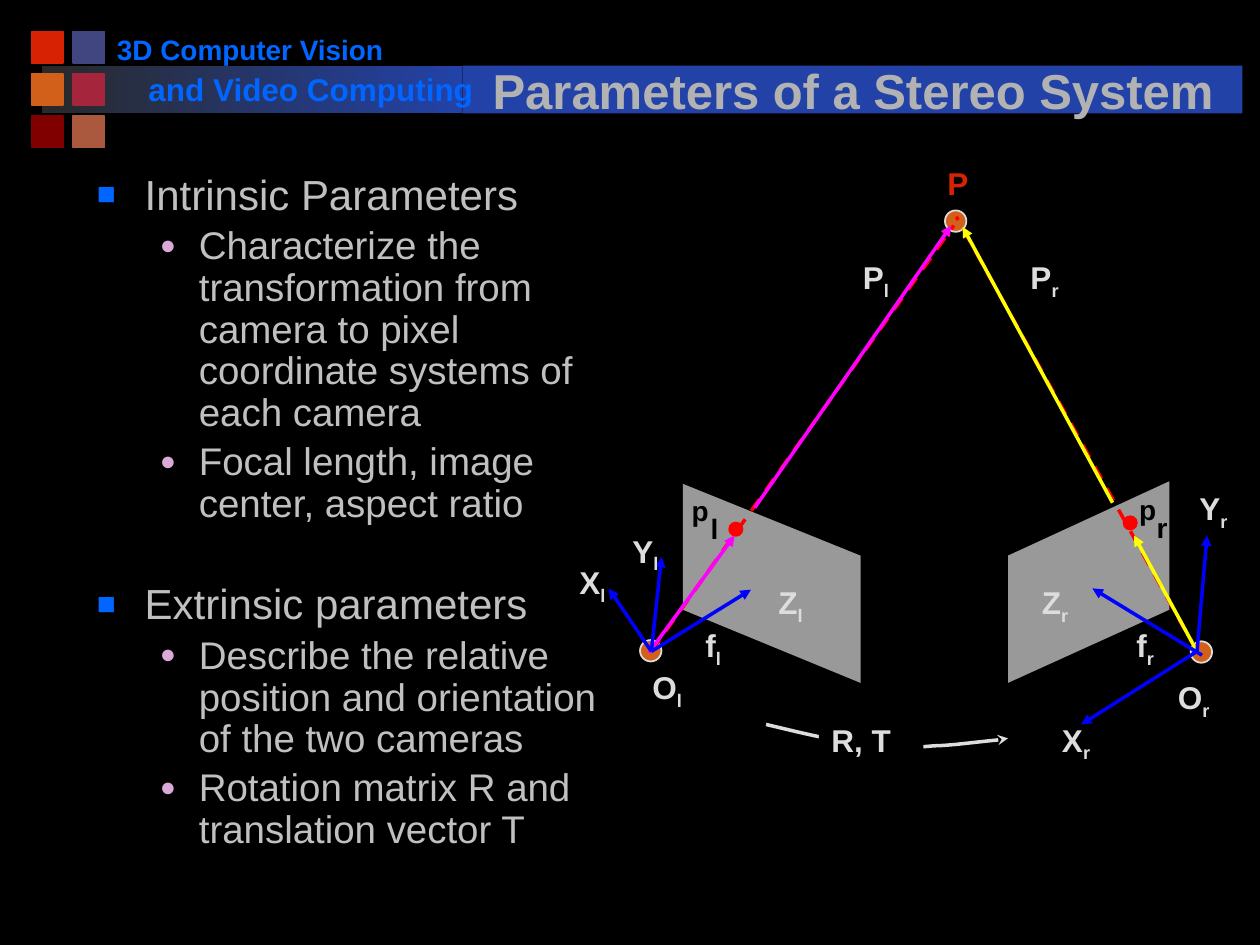
from dataclasses import dataclass

from lxml import etree
from pptx import Presentation
from pptx.dml.color import RGBColor
from pptx.enum.dml import MSO_LINE
from pptx.enum.shapes import MSO_CONNECTOR, MSO_SHAPE
from pptx.enum.text import MSO_ANCHOR, PP_ALIGN
from pptx.oxml import parse_xml
from pptx.oxml.ns import nsdecls, qn
from pptx.util import Inches, Pt

RECT, OVAL = MSO_SHAPE.RECTANGLE, MSO_SHAPE.OVAL
STRAIGHT = MSO_CONNECTOR.STRAIGHT
DASH = MSO_LINE.DASH
BOTTOM = MSO_ANCHOR.BOTTOM
CENTER = PP_ALIGN.CENTER


@dataclass(frozen=True)
class Theme:
    """Colours, font and type sizes of the slide."""
    font: str = "Arial"
    back: str = "000000"
    bar: str = "2242A8"
    bar_dark: str = "292929"
    course: str = "0066FF"
    title: str = "B2B2B2"
    body: str = "C0C0C0"
    dot_bullet: str = "DBA9D7"
    label: str = "DDDDDD"
    plane: str = "999999"
    point: str = "D2601A"
    scene: str = "D82204"
    red: str = "FF0000"
    axis: str = "0000FF"
    left_ray: str = "FF00FF"
    right_ray: str = "FFFF00"
    title_size: int = 28
    head_size: int = 24
    item_size: int = 22
    label_size: int = 18
    small_size: int = 16


T = Theme()
TILES = [["D82204", "424680"], ["D2601A", "A5253D"], ["800000", "AA583E"]]
BODY = [
    (0, "Intrinsic Parameters", 4.8),
    (1, "Characterize the transformation from camera to pixel coordinate systems of each camera", 4.4),
    (1, "Focal length, image center, aspect ratio", 4.4),
    (0, "Extrinsic parameters", 33),
    (1, "Describe the relative position and orientation of the two cameras", 4.4),
    (1, "Rotation matrix R and translation vector T", 4.4),
]
PLANES = [
    [(0.92, 2.59), (2.33, 3.16), (2.33, 4.17), (0.92, 3.59)],
    [(4.78, 2.57), (3.5, 3.16), (3.5, 4.17), (4.78, 3.59)],
]
IMAGE_POINTS = [(1.34, 2.95), (4.47, 2.9)]
IMAGE_LABELS = [("p", 0.99, 2.67), ("l", 1.14, 2.81), ("p", 4.54, 2.66), ("r", 4.68, 2.8)]
NODES = [(0.67, 3.92), (5.04, 3.93), (3.09, 0.51)]
RAYS = [
    ((0.67, 3.92), (3.07, 0.54), T.red, False),
    ((5, 3.92), (3.09, 0.47), T.red, False),
    ((0.65, 3.93), (1.33, 3), T.left_ray, True),
    ((1.49, 2.78), (3.05, 0.54), T.left_ray, True),
    ((5, 3.92), (4.5, 3), T.right_ray, True),
    ((4.33, 2.74), (3.14, 0.55), T.right_ray, True),
]
AXES = [((0.67, 3.92), end, T.axis, True) for end in [(0.33, 3.42), (1.46, 3.43), (0.75, 3.17)]] + [
    ((5, 3.92), (4.08, 4.5), T.axis, True),
    ((5.04, 3.95), (4.17, 3.42), T.axis, True),
    ((5, 3.92), (5.08, 3), T.axis, True),
]
LABELS = [
    ("O", "l", 0.58, 4), ("O", "r", 4.75, 4.08), ("X", "l", 0, 3.17), ("X", "r", 3.83, 4.42),
    ("P", "l", 2.25, 0.75), ("P", "r", 3.58, 0.75), ("f", "l", 1, 3.67), ("f", "r", 4.42, 3.67),
    ("Z", "l", 1.58, 3.33), ("Z", "r", 3.67, 3.33), ("Y", "l", 0.42, 2.92), ("Y", "r", 4.92, 2.58),
]
LINK_START = (1.58, 4.5)
LINK_CURVES = [
    ((1.79, 4.55), (1.99, 4.6), (2.17, 4.63)),
    ((2.36, 4.66), (2.57, 4.67), (2.69, 4.67)),
    ((2.81, 4.68), (2.8, 4.68), (2.91, 4.67)),
    ((3.02, 4.67), (3.25, 4.64), (3.35, 4.63)),
    ((3.45, 4.62), (3.47, 4.62), (3.5, 4.61)),
]


def rgb(color):
    """Return a colour object for a hex string."""
    return RGBColor.from_string(color)


def style(r, size, color, bold=True):
    """Format one run."""
    r.font.name, r.font.size, r.font.bold = T.font, Pt(size), bold
    r.font.color.rgb = rgb(color)


def add_text(s, x, y, w, h, text, size, color, wrap=True, inset=True):
    """Add a bold one-line text box."""
    sp = s.shapes.add_textbox(Inches(x), Inches(y), Inches(w), Inches(h))
    tf = sp.text_frame
    tf.word_wrap = wrap
    if not inset:
        tf.margin_left = tf.margin_right = tf.margin_top = tf.margin_bottom = 0
    tf.text = text
    style(tf.paragraphs[0].runs[0], size, color)
    return sp


def paint(sp, fill, line=None):
    """Give a shape a plain fill and an optional thin outline."""
    sp.shadow.inherit = False
    sp.fill.solid()
    sp.fill.fore_color.rgb = rgb(fill)
    if line:
        sp.line.color.rgb, sp.line.width = rgb(line), Pt(1)
    else:
        sp.line.fill.background()


def add_block(s, kind, x, y, w, h, fill, line=None):
    """Add a painted preset shape."""
    sp = s.shapes.add_shape(kind, Inches(x), Inches(y), Inches(w), Inches(h))
    paint(sp, fill, line)
    return sp


def add_outline(s, x, y, points, close):
    """Add a freeform through points relative to x, y."""
    pts = [(Inches(x + px), Inches(y + py)) for px, py in points]
    fb = s.shapes.build_freeform(*pts[0])
    fb.add_line_segments(pts[1:], close=close)
    return fb.convert_to_shape()


def add_head(line, kind):
    """Put an arrowhead at the end of a line."""
    etree.SubElement(line._get_or_add_ln(), qn("a:tailEnd"), type=kind)


def add_ray(s, x, y, start, end, color, arrow):
    """Add an arrow, or a dashed line without a head."""
    c = s.shapes.add_connector(STRAIGHT, Inches(x + start[0]), Inches(y + start[1]),
                               Inches(x + end[0]), Inches(y + end[1]))
    c.line.color.rgb, c.line.width = rgb(color), Pt(2)
    if arrow:
        add_head(c.line, "triangle")
    else:
        c.line.dash_style = DASH
    etree.SubElement(c._element.spPr, qn("a:effectLst"))


def bezier(p0, p1, p2, p3, steps=5):
    """Return points along a cubic curve, without its start."""
    return [tuple((1 - t) ** 3 * a + 3 * (1 - t) ** 2 * t * b + 3 * (1 - t) * t ** 2 * c + t ** 3 * d
                  for a, b, c, d in zip(p0, p1, p2, p3))
            for t in (i / steps for i in range(1, steps + 1))]


def add_header(s, x, y):
    """Draw the title bar, the tiles, the course name and the title."""
    fade = add_block(s, RECT, x + 0.08, y + 0.27, 3.34, 0.38, T.bar)
    fade.fill.gradient()
    fade.fill.gradient_angle = 0
    for stop, color, place in zip(fade.fill.gradient_stops, (T.bar_dark, T.bar), (0, 1)):
        stop.color.rgb, stop.position = rgb(color), place
    for i, row in enumerate(TILES):
        for j, color in enumerate(row):
            add_block(s, RECT, x + j * 0.33, y + i * 0.335, 0.25, 0.25, color, color)
    add_block(s, RECT, x + 3.42, y + 0.27, 6.19, 0.38, T.bar)
    add_text(s, x + 0.58, y - 0.04, 2.32, 0.37, "3D Computer Vision", T.small_size, T.course, wrap=False)
    add_text(s, x + 0.83, y + 0.26, 2.83, 0.4, "and Video Computing", T.label_size, T.course)
    sp = add_text(s, x + 3.33, y + 0.08, 6.38, 0.67, "Parameters of a Stereo System", T.title_size, T.title)
    sp.text_frame.vertical_anchor = BOTTOM
    p = sp.text_frame.paragraphs[0]
    p.alignment = CENTER
    p.runs[0].font._element.find(qn("a:latin")).addprevious(parse_xml(
        f'<a:effectLst {nsdecls("a")}><a:outerShdw dist="35921" dir="2700000">'
        f'<a:srgbClr val="{T.back}"/></a:outerShdw></a:effectLst>'))


def add_body(s, x, y, w, h):
    """Write the two-level bullet list."""
    tf = s.shapes.add_textbox(Inches(x), Inches(y), Inches(w), Inches(h)).text_frame
    tf.word_wrap = True
    levels = [(T.head_size, 0.38, 0.38, "■", T.course, 75), (T.item_size, 0.81, 0.31, "●", T.dot_bullet, 70)]
    for i, (level, text, before) in enumerate(BODY):
        size, margin, hang, bullet, color, scale = levels[level]
        p = tf.add_paragraph() if i else tf.paragraphs[0]
        p.text, p.level, p.line_spacing, p.space_before = text, level, 0.9, Pt(before)
        style(p.runs[0], size, T.body, bold=False)
        pPr = p._p.get_or_add_pPr()
        pPr.set("marL", str(Inches(margin)))
        pPr.set("indent", str(-Inches(hang)))
        etree.SubElement(etree.SubElement(pPr, qn("a:buClr")), qn("a:srgbClr"), val=color)
        etree.SubElement(pPr, qn("a:buSzPct"), val=str(scale * 1000))
        etree.SubElement(pPr, qn("a:buFont"), typeface=T.font)
        etree.SubElement(pPr, qn("a:buChar"), char=bullet)


def add_stereo(s, x, y):
    """Draw the two cameras, their rays, axes and labels."""
    for plane in PLANES:
        paint(add_outline(s, x, y, plane, True), T.plane)
    for px, py in IMAGE_POINTS:
        add_block(s, OVAL, x + px - 0.06, y + py - 0.06, 0.12, 0.12, T.red)
    for text, px, py in IMAGE_LABELS:
        add_text(s, x + px, y + py, 0.14, 0.27, text, T.small_size, T.back, wrap=False, inset=False)
    add_text(s, x + 2.92, y, 0.37, 0.4, "P", T.label_size, T.scene, wrap=False)
    for px, py in NODES:
        add_block(s, OVAL, x + px - 0.09, y + py - 0.09, 0.17, 0.17, T.point, T.label)
    for ray in RAYS + AXES:
        add_ray(s, x, y, *ray)
    for text, sub, px, py in LABELS:
        p = add_text(s, x + px, y + py, 0.58, 0.4, text, T.label_size, T.label).text_frame.paragraphs[0]
        r = p.add_run()
        r.text = sub
        style(r, T.label_size, T.label)
        r.font._element.set("baseline", "-25000")
    points = [LINK_START]
    for curve in LINK_CURVES:
        points += bezier(points[-1], *curve)
    link = add_outline(s, x, y, points, False)
    link.shadow.inherit = False
    link.fill.background()
    link.line.color.rgb, link.line.width = rgb(T.label), Pt(2)
    add_head(link.line, "stealth")
    paint(add_text(s, x + 2, y + 4.42, 0.83, 0.4, "R, T", T.label_size, T.label), T.back)


def main():
    """Build and save the slide."""
    prs = Presentation()
    prs.slide_width, prs.slide_height = Inches(10), Inches(7.5)
    s = prs.slides.add_slide(prs.slide_layouts[6])
    s.background.fill.solid()
    s.background.fill.fore_color.rgb = rgb(T.back)
    add_header(s, 0.25, 0.25)
    add_body(s, 0.67, 1.33, 4.42, 5.67)
    add_stereo(s, 4.5, 1.25)
    prs.save("out.pptx")


if __name__ == "__main__":
    main()
